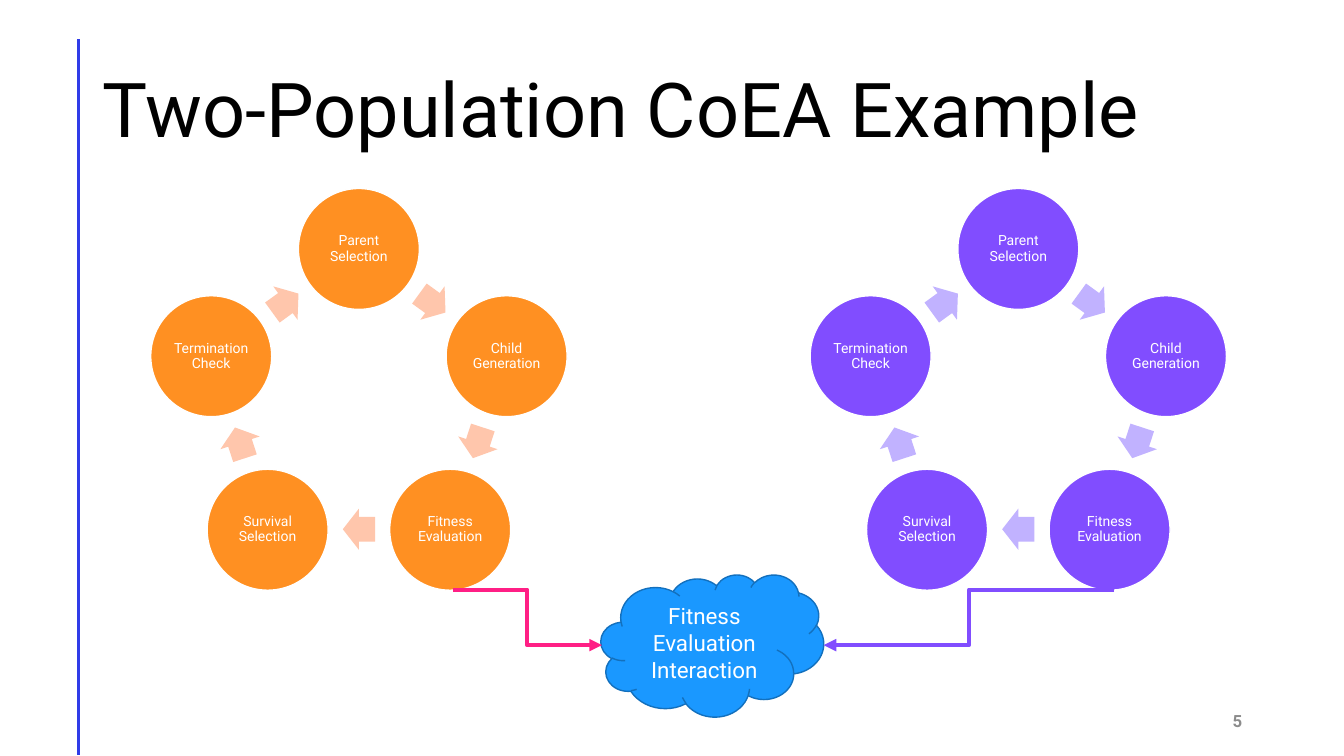
import math

import pptx
import pptx.util
import pptx.dml.color
import pptx.enum.shapes
import pptx.enum.text
import pptx.oxml
import pptx.oxml.ns

Inches = pptx.util.Inches
Pt = pptx.util.Pt
RGBColor = pptx.dml.color.RGBColor
MSO_SHAPE = pptx.enum.shapes.MSO_SHAPE
MSO_CONNECTOR = pptx.enum.shapes.MSO_CONNECTOR
PP_ALIGN = pptx.enum.text.PP_ALIGN

BLACK = RGBColor(0x00, 0x00, 0x00)
WHITE = RGBColor(0xFF, 0xFF, 0xFF)
GRAY = RGBColor(0x8C, 0x8C, 0x8C)
RULE_BLUE = RGBColor(0x30, 0x3C, 0xE8)
ORANGE = RGBColor(0xFF, 0x90, 0x22)
PEACH = RGBColor(0xFF, 0xC6, 0xAC)
PURPLE = RGBColor(0x81, 0x4D, 0xFF)
LAVENDER = RGBColor(0xC1, 0xB2, 0xFF)
PINK = RGBColor(0xFF, 0x1F, 0x85)
CLOUD_BLUE = RGBColor(0x1A, 0x98, 0xFF)
CLOUD_EDGE = RGBColor(0x13, 0x70, 0xBD)


def write(sp, text, size, color, align, spacing=1.0, bold=False):
    tf = sp.text_frame
    tf.word_wrap = True
    tf.vertical_anchor = pptx.enum.text.MSO_ANCHOR.MIDDLE
    tf.text = text
    p = tf.paragraphs[0]
    p.alignment = align
    p.line_spacing = spacing
    font = p.runs[0].font
    font.name = "Roboto"
    font.size = Pt(size)
    font.bold = bold
    font.color.rgb = color
    return tf


def connect(kind, x1, y1, x2, y2, color, width, arrow=False):
    cxn = s.shapes.add_connector(kind, Inches(x1), Inches(y1), Inches(x2), Inches(y2))
    cxn.line.color.rgb = color
    cxn.line.width = Pt(width)
    if arrow:
        ln = cxn.line._get_or_add_ln()
        pptx.oxml.ns.qn("a:tailEnd")
        ln.append(pptx.oxml.parse_xml(
            '<a:tailEnd type="triangle" '
            'xmlns:a="http://schemas.openxmlformats.org/drawingml/2006/main"/>'))
    cxn._element.spPr.append(pptx.oxml.parse_xml(
        '<a:effectLst xmlns:a="http://schemas.openxmlformats.org/drawingml/2006/main"/>'))


prs = pptx.Presentation()
prs.slide_width = Inches(13.33)
prs.slide_height = Inches(7.5)
s = prs.slides.add_slide(prs.slide_layouts[6])

connect(MSO_CONNECTOR.STRAIGHT, 0.78, 0.39, 0.78, 7.49, RULE_BLUE, 2)

title = s.shapes.add_textbox(Inches(0.92), Inches(0.4), Inches(11.5), Inches(1.45))
write(title, "Two-Population CoEA Example", 54, BLACK, PP_ALIGN.LEFT, 0.9)

number = s.shapes.add_textbox(Inches(9.42), Inches(6.95), Inches(3), Inches(0.4))
write(number, "5", 12, GRAY, PP_ALIGN.RIGHT, bold=True)

STEPS = ["Parent Selection", "Child Generation", "Fitness Evaluation",
         "Survival Selection", "Termination Check"]
STEP_ANGLE = 360 / len(STEPS)
CENTER_Y = 4.01
STEP_RADIUS, ARROW_RADIUS = 1.54, 1.24
CIRCLE = 1.2
ARROW_W, ARROW_H = 0.32, 0.41

for center_x, circle_color, arrow_color in [(10.1, PURPLE, LAVENDER), (3.56, ORANGE, PEACH)]:
    for i, step in enumerate(STEPS):
        angle = math.radians(i * STEP_ANGLE)
        x = center_x + STEP_RADIUS * math.sin(angle)
        y = CENTER_Y - STEP_RADIUS * math.cos(angle)
        sp = s.shapes.add_shape(MSO_SHAPE.OVAL, Inches(x - CIRCLE / 2), Inches(y - CIRCLE / 2),
                                Inches(CIRCLE), Inches(CIRCLE))
        sp.shadow.inherit = False
        sp.fill.solid()
        sp.fill.fore_color.rgb = circle_color
        sp.line.color.rgb = WHITE
        sp.line.width = Pt(1)
        tf = write(sp, step, 10, WHITE, PP_ALIGN.CENTER, 0.9)
        tf.margin_left = tf.margin_right = tf.margin_top = tf.margin_bottom = Inches(0.01)

        turn = (i + 0.5) * STEP_ANGLE
        x = center_x + ARROW_RADIUS * math.sin(math.radians(turn))
        y = CENTER_Y - ARROW_RADIUS * math.cos(math.radians(turn))
        arrow = s.shapes.add_shape(MSO_SHAPE.RIGHT_ARROW, Inches(x - ARROW_W / 2),
                                   Inches(y - ARROW_H / 2), Inches(ARROW_W), Inches(ARROW_H))
        arrow.adjustments[0] = 0.6
        arrow.adjustments[1] = 0.5
        arrow.rotation = turn
        arrow.shadow.inherit = False
        arrow.fill.solid()
        arrow.fill.fore_color.rgb = arrow_color
        arrow.line.fill.background()

cloud = s.shapes.add_shape(MSO_SHAPE.CLOUD, Inches(5.96), Inches(5.7), Inches(2.21), Inches(1.41))
cloud.shadow.inherit = False
cloud.fill.solid()
cloud.fill.fore_color.rgb = CLOUD_BLUE
cloud.line.color.rgb = CLOUD_EDGE
cloud.line.width = Pt(1)
write(cloud, "Fitness Evaluation Interaction", 16, WHITE, PP_ALIGN.CENTER)

connect(MSO_CONNECTOR.ELBOW, 11.05, 5.85, 8.17, 6.4, PURPLE, 3, arrow=True)
connect(MSO_CONNECTOR.ELBOW, 4.49, 5.85, 5.97, 6.4, PINK, 3, arrow=True)

prs.save("out.pptx")
